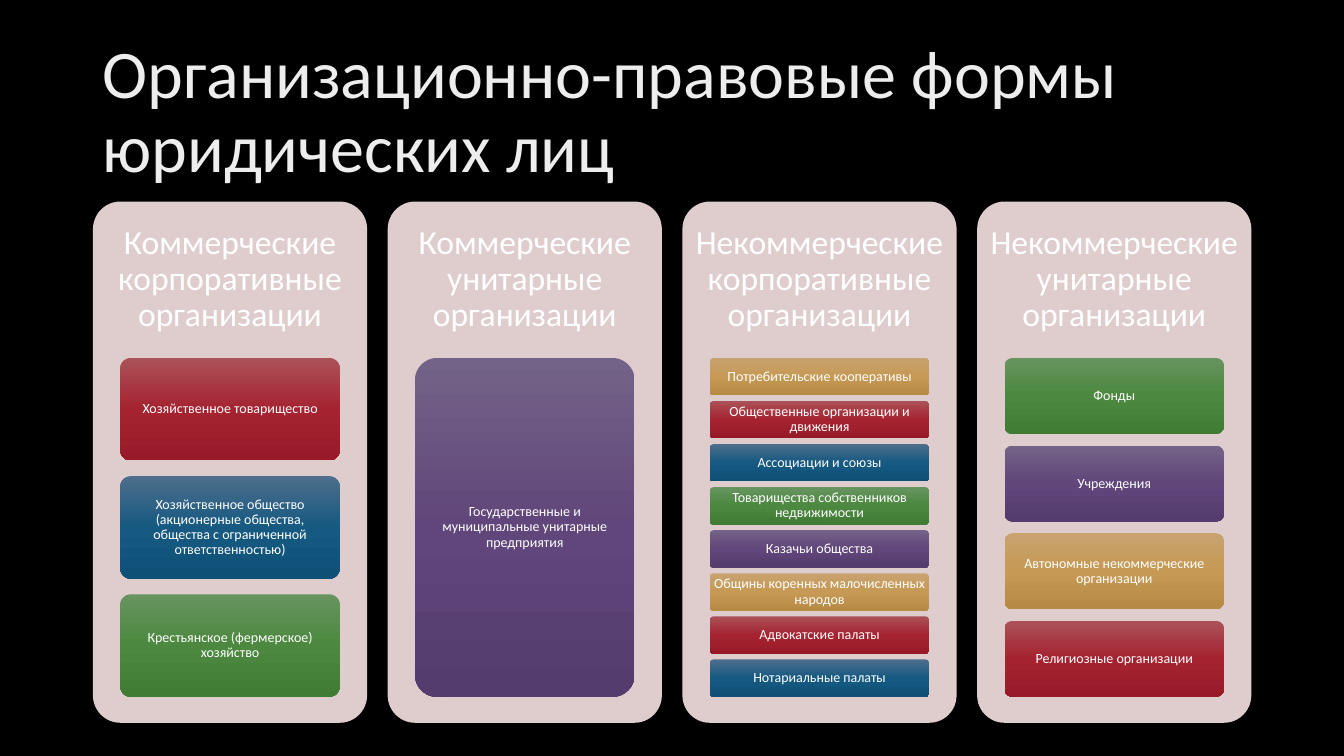
from itertools import cycle

from pptx import Presentation
from pptx.dml.color import RGBColor
from pptx.enum import shapes, text
from pptx.oxml import ns, xmlchemy
from pptx.util import Pt

BLACK = RGBColor(0x00, 0x00, 0x00)
WHITE = RGBColor(0xFF, 0xFF, 0xFF)
PANEL = RGBColor(0xDF, 0xCD, 0xCE)
TITLE_STOPS = [(0, RGBColor(0xBF, 0xBF, 0xBF)), (28, RGBColor(0xED, 0xED, 0xED)), (100, WHITE)]
RED = RGBColor(0xAB, 0x52, 0x58), RGBColor(0xA5, 0x23, 0x31), RGBColor(0x98, 0x1A, 0x28)
BLUE = RGBColor(0x4E, 0x6E, 0x8C), RGBColor(0x16, 0x59, 0x81), RGBColor(0x0F, 0x50, 0x77)
GREEN = RGBColor(0x67, 0x94, 0x5F), RGBColor(0x4C, 0x88, 0x3F), RGBColor(0x41, 0x7C, 0x35)
PURPLE = RGBColor(0x74, 0x63, 0x88), RGBColor(0x60, 0x46, 0x7A), RGBColor(0x55, 0x3C, 0x6F)
GOLD = RGBColor(0xC8, 0xA3, 0x70), RGBColor(0xC6, 0x99, 0x54), RGBColor(0xB6, 0x89, 0x45)

FONT = "Calibri"
CORNER = 0.1
COLUMN_PITCH = 1.075  # in column widths
CARD_GAP = 2 / 13  # in card heights

TITLE = "Организационно-правовые формы юридических лиц"
COLUMNS = [
    ("Коммерческие корпоративные организации", [
        "Хозяйственное товарищество",
        "Хозяйственное общество (акционерные общества, общества с ограниченной ответственностью)",
        "Крестьянское (фермерское) хозяйство",
    ]),
    ("Коммерческие унитарные организации", [
        "Государственные и муниципальные унитарные предприятия",
    ]),
    ("Некоммерческие корпоративные организации", [
        "Потребительские кооперативы",
        "Общественные организации и движения",
        "Ассоциации и союзы",
        "Товарищества собственников недвижимости",
        "Казачьи общества",
        "Общины коренных малочисленных народов",
        "Адвокатские палаты",
        "Нотариальные палаты",
    ]),
    ("Некоммерческие унитарные организации", [
        "Фонды",
        "Учреждения",
        "Автономные некоммерческие организации",
        "Религиозные организации",
    ]),
]


def set_gradient(fill, properties, stops, angle):
    """Fill with (percent, colour) stops; the angle runs clockwise."""
    fill.gradient()
    fill.gradient_angle = 360 - angle
    stop_list = properties.find(".//" + ns.qn("a:gsLst"))
    for stop in list(stop_list):
        stop_list.remove(stop)
    for percent, colour in stops:
        stop = xmlchemy.OxmlElement("a:gs")
        stop.set("pos", str(percent * 1000))
        value = xmlchemy.OxmlElement("a:srgbClr")
        value.set("val", str(colour))
        stop.append(value)
        stop_list.append(stop)


def set_text(shape, wording, size, align, margins):
    frame = shape.text_frame
    frame.text = wording
    frame.word_wrap = True
    frame.auto_size = text.MSO_AUTO_SIZE.NONE
    frame.vertical_anchor = text.MSO_ANCHOR.MIDDLE
    frame.margin_left = frame.margin_right = Pt(margins[0])
    frame.margin_top = frame.margin_bottom = Pt(margins[1])
    para = frame.paragraphs[0]
    para.alignment = align
    para.line_spacing = 0.9
    span = para.runs[0]
    span.font.name = FONT
    span.font.size = Pt(size)
    span.font.color.rgb = WHITE
    return span


def add_round_box(page, left, top, width, height):
    box = page.shapes.add_shape(shapes.MSO_SHAPE.ROUNDED_RECTANGLE,
                                Pt(left), Pt(top), Pt(width), Pt(height))
    box.adjustments[0] = CORNER
    box.shadow.inherit = False
    box.line.fill.background()
    return box


def add_title(page, left, top, width, height):
    title = page.shapes.title
    title.left, title.top, title.width, title.height = Pt(left), Pt(top), Pt(width), Pt(height)
    span = set_text(title, TITLE, 48.6, text.PP_ALIGN.LEFT, (7.2, 3.6))
    set_gradient(span.font.fill, span._r, TITLE_STOPS, 80)


def add_cards(page, labels, palette, left, top, width, height):
    count = len(labels)
    card_height = height / (count + (count - 1) * CARD_GAP)
    for row, label in enumerate(labels):
        card_top = top + row * card_height * (1 + CARD_GAP)
        card = add_round_box(page, left, card_top, width, card_height)
        set_gradient(card.fill, card._element.spPr, zip((0, 50, 100), next(palette)), 90)
        set_text(card, label, 10, text.PP_ALIGN.CENTER, (2, 1.5))


def add_column(page, heading, labels, palette, left, top, width, height):
    panel = add_round_box(page, left, top, width, height)
    panel.fill.solid()
    panel.fill.fore_color.rgb = PANEL
    head_height = height * 0.3
    head = page.shapes.add_textbox(Pt(left), Pt(top), Pt(width), Pt(head_height))
    set_text(head, heading, 24, text.PP_ALIGN.CENTER, (7.2, 7.2))
    add_cards(page, labels, palette, left + width * 0.1, top + head_height,
              width * 0.8, height * 0.65)


def add_columns(page, left, top, width, height):
    palette = cycle([RED, BLUE, GREEN, PURPLE, GOLD])
    column_width = width / (1 + (len(COLUMNS) - 1) * COLUMN_PITCH)
    for index, (heading, labels) in enumerate(COLUMNS):
        add_column(page, heading, labels, palette,
                   left + index * column_width * COLUMN_PITCH, top, column_width, height)


def main():
    deck = Presentation()
    deck.slide_width, deck.slide_height = Pt(960), Pt(540)
    page = deck.slides.add_slide(deck.slide_layouts.get_by_name("Title Only"))
    page.background.fill.solid()
    page.background.fill.fore_color.rgb = BLACK
    add_title(page, 66, 28.75, 828, 104.4)
    add_columns(page, 66.4, 144, 827.4, 372.3)
    deck.save("out.pptx")


if __name__ == "__main__":
    main()
